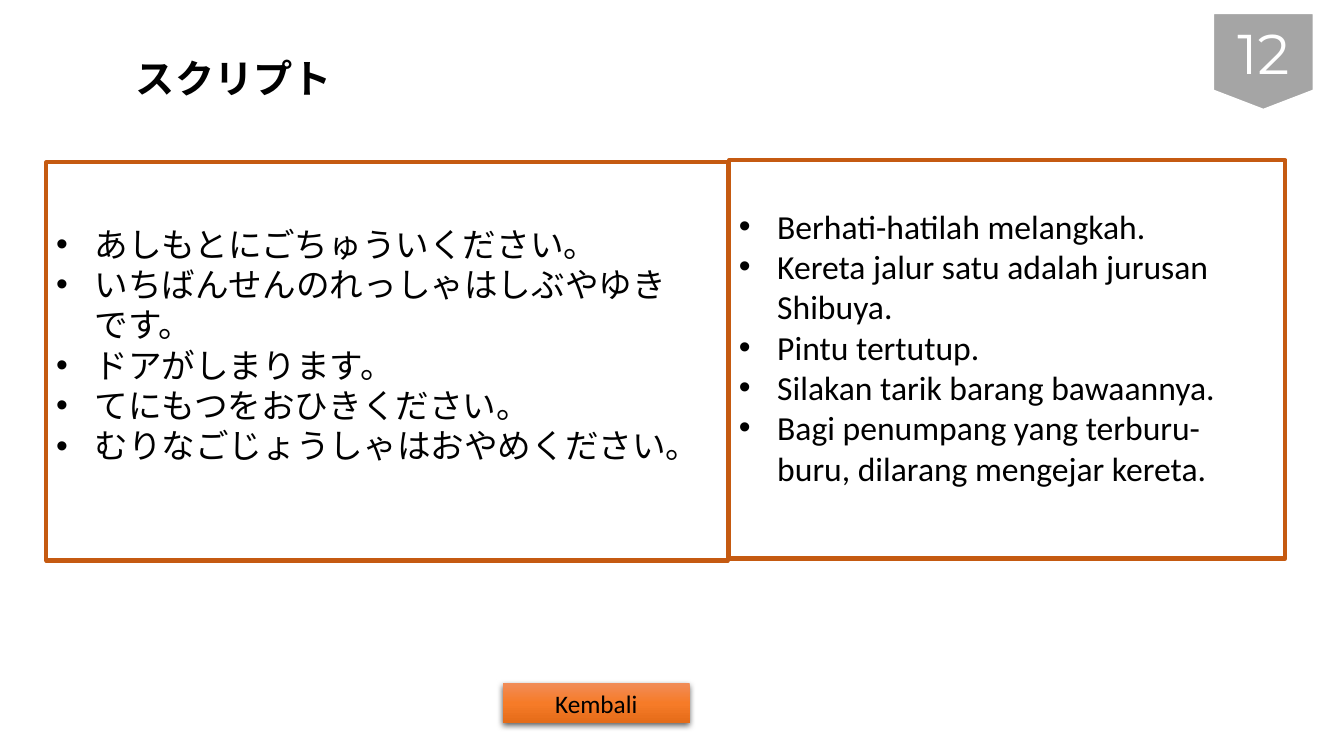
"""Builds a slide with a Japanese script beside its Indonesian translation."""
from dataclasses import dataclass
from typing import Optional

from lxml import etree
from pptx import Presentation
from pptx.dml.color import RGBColor
from pptx.enum.shapes import MSO_SHAPE
from pptx.enum.text import MSO_ANCHOR, PP_ALIGN
from pptx.oxml.ns import qn
from pptx.util import Inches, Pt

RECT = MSO_SHAPE.RECTANGLE
OFFPAGE = MSO_SHAPE.FLOWCHART_OFFPAGE_CONNECTOR
TOP, MIDDLE = MSO_ANCHOR.TOP, MSO_ANCHOR.MIDDLE
LEFT, CENTER = PP_ALIGN.LEFT, PP_ALIGN.CENTER

W, H = Inches(13.33), Inches(7.5)
INDENT = Inches(0.38)
COLORS = {"text": "000000", "white": "FFFFFF", "frame": "C55A11", "badge": "A5A5A5"}
BUTTON_STOPS = ((0, "F18C57"), (50, "F67B28"), (100, "E56C19"))

JAPANESE = (
    "あしもとにごちゅういください。",
    "いちばんせんのれっしゃはしぶやゆきです。",
    "ドアがしまります。",
    "てにもつをおひきください。",
    "むりなごじょうしゃはおやめください。",
)
INDONESIAN = (
    "Berhati-hatilah melangkah.",
    "Kereta jalur satu adalah jurusan Shibuya.",
    "Pintu tertutup.",
    "Silakan tarik barang bawaannya.",
    "Bagi penumpang yang terburu- buru, dilarang mengejar kereta.",
)


@dataclass(frozen=True)
class Box:
    """A box placed in percent of the slide's width and height."""
    x: float
    y: float
    w: float
    h: float
    lines: tuple[str, ...] = ()
    shape: Optional[MSO_SHAPE] = None
    fill: Optional[str] = None
    line: Optional[str] = None
    line_pt: float = 3
    size: int = 24
    font: str = "Calibri"
    color: str = "text"
    bold: bool = False
    bullets: bool = False
    align: PP_ALIGN = LEFT
    anchor: MSO_ANCHOR = TOP
    top_inset: float = 0.05


BOXES = (
    Box(54.24, 21.2, 41.4, 52.67, INDONESIAN, RECT, line="frame", bullets=True,
        top_inset=0.45),
    Box(3.45, 21.47, 50.7, 52.67, shape=RECT, line="frame"),
    Box(9.38, 6.53, 26.1, 7.6, ("スクリプト",), size=28, bold=True),
    Box(3.45, 28.93, 48.45, 33.6, JAPANESE, bullets=True),
    Box(90.25, 1.73, 7.5, 12.8, ("12",), OFFPAGE, "badge", "white", 1.5, 40,
        "Montserrat", "white", align=CENTER),
)
BUTTON = Box(37.43, 90.4, 13.88, 5.2, ("Kembali",), RECT, size=18,
             align=CENTER, anchor=MIDDLE)


def rgb(name: str) -> RGBColor:
    """Look up a named colour."""
    return RGBColor.from_string(COLORS[name])


def add_bullet(p) -> None:
    """Give a paragraph a hanging bullet."""
    pPr = p._p.get_or_add_pPr()
    pPr.set("marL", str(INDENT))
    pPr.set("indent", str(-INDENT))
    etree.SubElement(pPr, qn("a:buFont"), typeface="Arial")
    etree.SubElement(pPr, qn("a:buChar"), char="•")


def add_text(tf, box: Box) -> None:
    """Write the box's lines, one paragraph each."""
    tf.word_wrap = True
    tf.vertical_anchor = box.anchor
    tf.margin_top = Inches(box.top_inset)
    for i, line in enumerate(box.lines):
        p = tf.add_paragraph() if i else tf.paragraphs[0]
        p.alignment = box.align
        if box.bullets:
            add_bullet(p)
        r = p.add_run()
        r.text = line
        r.font.name, r.font.size, r.font.bold = box.font, Pt(box.size), box.bold
        r.font.color.rgb = rgb(box.color)


def add_box(s, box: Box):
    """Draw a box and return its shape."""
    at = [round(share * side / 100) for share, side in
          zip((box.x, box.y, box.w, box.h), (W, H, W, H))]
    if box.shape is None:
        sp = s.shapes.add_textbox(*at)
    else:
        sp = s.shapes.add_shape(box.shape, *at)
        sp.shadow.inherit = False
        if box.fill:
            sp.fill.solid()
            sp.fill.fore_color.rgb = rgb(box.fill)
        else:
            sp.fill.background()
        if box.line:
            sp.line.color.rgb = rgb(box.line)
            sp.line.width = Pt(box.line_pt)
        else:
            sp.line.fill.background()
    add_text(sp.text_frame, box)
    return sp


def add_color(parent, value: str):
    """Append a hex colour to an XML element."""
    return etree.SubElement(parent, qn("a:srgbClr"), val=value)


def add_button(s, box: Box) -> None:
    """Draw a box with a gradient fill and a soft shadow."""
    sp = add_box(s, box)
    sp.fill.gradient()
    sp.fill.gradient_angle = 270
    spPr = sp._element.spPr
    stops = spPr.find(qn("a:gradFill")).find(qn("a:gsLst"))
    for gs in list(stops):
        stops.remove(gs)
    for pos, value in BUTTON_STOPS:
        add_color(etree.SubElement(stops, qn("a:gs"), pos=str(pos * 1000)), value)
    shadow = etree.SubElement(
        spPr.find(qn("a:effectLst")), qn("a:outerShdw"), blurRad=str(Pt(4.5)),
        dist=str(Pt(1.5)), dir="5400000", algn="ctr", rotWithShape="0")
    etree.SubElement(add_color(shadow, COLORS["text"]), qn("a:alpha"), val="63000")


def main() -> None:
    """Build and save the slide."""
    prs = Presentation()
    prs.slide_width, prs.slide_height = W, H
    s = prs.slides.add_slide(prs.slide_layouts[6])
    for box in BOXES:
        add_box(s, box)
    add_button(s, BUTTON)
    prs.save("out.pptx")


if __name__ == "__main__":
    main()
